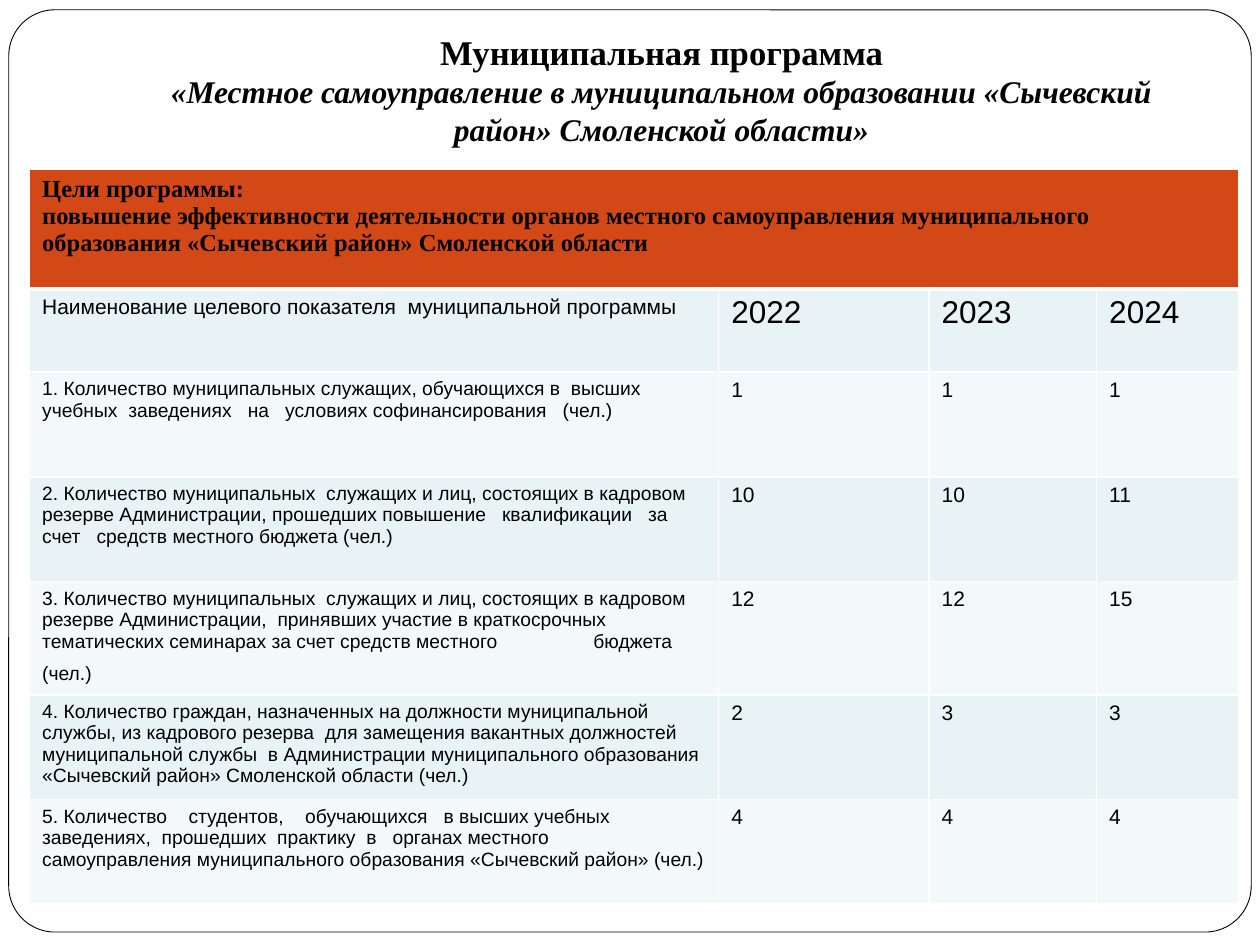
from lxml.etree import SubElement
from pptx import Presentation
from pptx.dml.color import RGBColor
from pptx.enum.shapes import MSO_SHAPE
from pptx.enum.text import MSO_ANCHOR, MSO_AUTO_SIZE, PP_ALIGN
from pptx.oxml.ns import qn
from pptx.util import Pt

BLACK = RGBColor(0x00, 0x00, 0x00)
WHITE = RGBColor(0xFF, 0xFF, 0xFF)
ORANGE = RGBColor(0xD3, 0x48, 0x17)
BANDS = [RGBColor(0xE7, 0xF3, 0xF4), RGBColor(0xF3, 0xF9, 0xFA)]
SERIF, SANS = "Times New Roman", "Arial"

GOAL = [
    "Цели программы:",
    "повышение эффективности деятельности органов местного самоуправления муниципального "
    "образования «Сычевский район» Смоленской области",
]
INDICATORS = [
    ("Наименование целевого показателя  муниципальной программы", "2022", "2023", "2024"),
    ("1. Количество муниципальных служащих, обучающихся в  высших  учебных  заведениях   на   "
     "условиях софинансирования   (чел.)", "1", "1", "1"),
    ("2. Количество муниципальных  служащих и лиц, состоящих в кадровом резерве Администрации, "
     "прошедших повышение   квалификации   за   счет   средств местного бюджета (чел.)",
     "10", "10", "11"),
    ("3. Количество муниципальных  служащих и лиц, состоящих в кадровом резерве Администрации,  "
     "принявших участие в краткосрочных тематических семинарах за счет средств местного\t"
     "бюджета (чел.)", "12", "12", "15"),
    ("4. Количество граждан, назначенных на должности муниципальной службы, из кадрового резерва  "
     "для замещения вакантных должностей муниципальной службы  в Администрации муниципального "
     "образования «Сычевский район» Смоленской области (чел.)", "2", "3", "3"),
    ("5. Количество    студентов,    обучающихся   в высших учебных заведениях,  прошедших  "
     "практику  в   органах местного   самоуправления муниципального образования "
     "«Сычевский район» (чел.)", "4", "4", "4"),
]
COLUMN_WIDTHS = [393.8, 120.2, 95.8, 81.4]
ROW_HEIGHTS = [68.4, 47.5, 59.8, 59.8, 64.8, 59.8, 59.8]


def add_run(paragraph, text, size, face, bold=False, italic=False):
    run = paragraph.add_run()
    run.text = text
    run.font.size = Pt(size)
    run.font.name = face
    run.font.bold = bold
    run.font.italic = italic
    run.font.color.rgb = BLACK


def style_cell(cell, color, top=1, bottom=1):
    properties = cell._tc.get_or_add_tcPr()
    for side, width in (("L", 1), ("R", 1), ("T", top), ("B", bottom)):
        border = SubElement(properties, qn(f"a:ln{side}"), w=str(Pt(width)))
        paint = SubElement(border, qn("a:solidFill"))
        SubElement(paint, qn("a:srgbClr"), val=str(WHITE))
    cell.fill.solid()
    cell.fill.fore_color.rgb = color


prs = Presentation()
prs.slide_width, prs.slide_height = Pt(720), Pt(540)
slide = prs.slides.add_slide(prs.slide_layouts[5])

frame = slide.shapes.add_shape(MSO_SHAPE.ROUNDED_RECTANGLE, Pt(5), Pt(5.6), Pt(710), Pt(527))
frame.adjustments[0] = 0.05
frame.shadow.inherit = False
frame.fill.solid()
frame.fill.fore_color.rgb = WHITE
frame.line.color.rgb = BLACK
frame.line.width = Pt(0.5)
slide.shapes._spTree.insert(2, frame._element)

title = slide.shapes.title
title.left, title.top, title.width, title.height = Pt(72), Pt(21.6), Pt(612), Pt(90)
heading = title.text_frame
heading.word_wrap = True
heading.auto_size = MSO_AUTO_SIZE.NONE
heading.vertical_anchor = MSO_ANCHOR.BOTTOM
heading.margin_bottom = Pt(27)
programme = heading.paragraphs[0]
programme.alignment = PP_ALIGN.CENTER
add_run(programme, "Муниципальная программа", 19.8, SERIF, bold=True)
programme.add_line_break()
add_run(programme, "«Местное самоуправление в муниципальном образовании «Сычевский район» "
        "Смоленской области»", 18, SERIF, bold=True, italic=True)

table = slide.shapes.add_table(
    len(ROW_HEIGHTS), len(COLUMN_WIDTHS), Pt(16.9), Pt(96.8),
    Pt(sum(COLUMN_WIDTHS)), Pt(sum(ROW_HEIGHTS))).table
for column, width in zip(table.columns, COLUMN_WIDTHS):
    column.width = Pt(width)
for row, height in zip(table.rows, ROW_HEIGHTS):
    row.height = Pt(height)

goal_cell = table.cell(0, 0)
goal_cell.merge(table.cell(0, 3))
for cell in table.rows[0].cells:
    style_cell(cell, ORANGE, bottom=3)
goal_cell.text_frame.add_paragraph()
for paragraph, line in zip(goal_cell.text_frame.paragraphs, GOAL):
    add_run(paragraph, line, 14, SERIF, bold=True)

for r, indicator in enumerate(INDICATORS, start=1):
    name_size, value_size = (12, 18) if r == 1 else (11, 12)
    for c, text in enumerate(indicator):
        cell = table.cell(r, c)
        style_cell(cell, BANDS[(r - 1) % 2], top=3 if r == 1 else 1)
        paragraph = cell.text_frame.paragraphs[0]
        add_run(paragraph, text, value_size if c else name_size, SANS)
        if "\t" in text:
            tabs = SubElement(paragraph._p.get_or_add_pPr(), qn("a:tabLst"))
            SubElement(tabs, qn("a:tab"), pos=str(Pt(315)), algn="l")
            add_run(paragraph, " ", 18, SANS)

prs.save("out.pptx")
